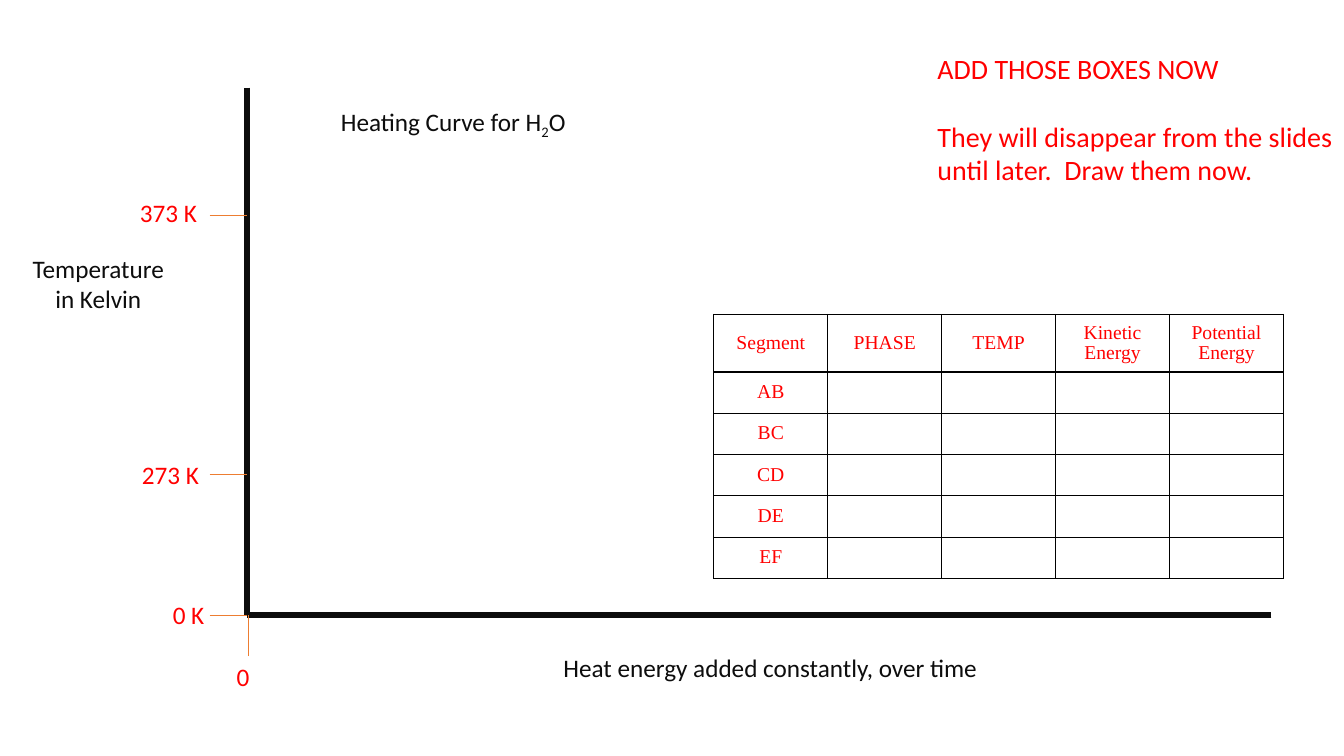
from lxml import etree
from pptx import Presentation
from pptx.dml.color import RGBColor
from pptx.enum.shapes import MSO_CONNECTOR
from pptx.enum.text import MSO_ANCHOR, MSO_AUTO_SIZE, PP_ALIGN
from pptx.oxml import parse_xml
from pptx.oxml.ns import qn
from pptx.util import Inches, Pt

LEFT, MID = PP_ALIGN.LEFT, PP_ALIGN.CENTER
TOP, CENTER = MSO_ANCHOR.TOP, MSO_ANCHOR.MIDDLE
FIXED = MSO_AUTO_SIZE.NONE
STRAIGHT = MSO_CONNECTOR.STRAIGHT
INK = RGBColor(0x0D, 0x0D, 0x0D)
RED = RGBColor(0xFF, 0, 0)
ORANGE = RGBColor(0xED, 0x7D, 0x31)
NS = "http://schemas.openxmlformats.org/drawingml/2006/main"

# Content: underscores enclose a subscript
TITLE = "Heating Curve for H_2_O"
LABELS = [  # text, box, format
    ("Temperature in Kelvin", (0.19, 2.46, 1.57, 0.71), {"align": MID}),
    ("Heat energy added constantly, over time", (5.47, 6.42, 4.34, 0.4),
     {"align": MID}),
    ("ADD THOSE BOXES NOW\nThey will disappear from the slides until later."
     "  Draw them now.", (9.2, 0.46, 4.13, 1.45),
     {"size": 20, "color": RED, "gap": 24.4}),
    ("373 K", (1.29, 1.91, 0.8, 0.4), {"color": RED}),
    ("273 K", (1.31, 4.51, 0.8, 0.4), {"color": RED}),
    ("0 K", (1.47, 5.9, 0.8, 0.4), {"color": RED, "align": MID}),
    ("0", (2.1, 6.51, 0.62, 0.4), {"color": RED, "align": MID}),
]
HEADS = ["Segment", "PHASE", "TEMP", "Kinetic\vEnergy", "Potential\vEnergy"]
PARTS = ["AB", "BC", "CD", "DE", "EF"]

# Axis geometry in inches
AXIS_X, AXIS_Y = 2.45, 6.1
AXIS_TOP, AXIS_END = 0.87, 12.61
TICK_X = 2.08
TICKS = [2.14, 4.71, AXIS_Y]

# Table geometry in inches
GRID_X, GRID_Y, COL = 7.08, 3.12, 1.13
HEAD_H, ROW_H = 0.57, 0.41


def put(frame, text, size=18, color=INK, font="Calibri", align=LEFT,
        gap=0, spacing=1.0):
    """Fill a frame; each line of text is a paragraph."""
    for n, line in enumerate(text.split("\n")):
        para = frame.add_paragraph() if n else frame.paragraphs[0]
        para.alignment = align
        para.line_spacing = spacing
        para.space_before = Pt(gap if n else 0)
        para.font.size = Pt(size)
        for i, part in enumerate(line.split("_")):
            for j, piece in enumerate(part.split("\v")):
                if j:
                    para.add_line_break()
                if not piece:
                    continue
                run = para.add_run()
                run.text = piece
                run.font.size = Pt(size)
                run.font.name = font
                run.font.color.rgb = color
                if i % 2:
                    run.font._element.set("baseline", "-25000")


def rule(start, end, color, width):
    line = slide.shapes.add_connector(
        STRAIGHT, *(Inches(v) for v in start + end))
    line.line.color.rgb = color
    line.line.width = Pt(width)
    etree.SubElement(line._element.spPr, qn("a:effectLst"))


def border(cell):
    props = cell._tc.get_or_add_tcPr()
    for i, side in enumerate(("lnL", "lnR", "lnT", "lnB")):
        props.insert(i, parse_xml(
            f'<a:{side} xmlns:a="{NS}" w="12700"><a:solidFill>'
            f'<a:srgbClr val="000000"/></a:solidFill></a:{side}>'))


deck = Presentation()
deck.slide_width, deck.slide_height = Inches(13.33), Inches(7.5)
slide = deck.slides.add_slide(deck.slide_layouts[5])

# Axes and ticks
rule((AXIS_X, AXIS_TOP), (AXIS_X, AXIS_Y), INK, 4.5)
rule((AXIS_END, AXIS_Y), (AXIS_X, AXIS_Y), INK, 4.5)
for y in TICKS:
    rule((TICK_X, y), (AXIS_X, y), ORANGE, 0.5)
rule((AXIS_X + 0.01, 6.51), (AXIS_X + 0.01, AXIS_Y), ORANGE, 0.5)

# Title
title = slide.shapes.title
title.left, title.top = Inches(3.24), Inches(1)
title.width, title.height = Inches(2.51), Inches(0.4)
title.text_frame.auto_size = FIXED
title.text_frame.vertical_anchor = TOP
put(title.text_frame, TITLE, align=MID)

# Labels
for text, box, style in LABELS:
    frame = slide.shapes.add_textbox(*(Inches(v) for v in box)).text_frame
    frame.word_wrap = True
    put(frame, text, **style)

# Segment table
rows = [HEADS] + [[part] + [""] * (len(HEADS) - 1) for part in PARTS]
grid = slide.shapes.add_table(
    len(rows), len(HEADS), Inches(GRID_X), Inches(GRID_Y),
    Inches(COL * len(HEADS)), Inches(HEAD_H + ROW_H * len(PARTS))).table
grid.first_row = grid.horz_banding = False
for col in grid.columns:
    col.width = Inches(COL)
for r, row in enumerate(rows):
    grid.rows[r].height = Inches(ROW_H if r else HEAD_H)
    for c, text in enumerate(row):
        cell = grid.cell(r, c)
        cell.fill.background()
        cell.vertical_anchor = CENTER
        border(cell)
        put(cell.text_frame, text, size=14, color=RED,
            font="Times New Roman", align=MID, spacing=0.93)

deck.save("out.pptx")
